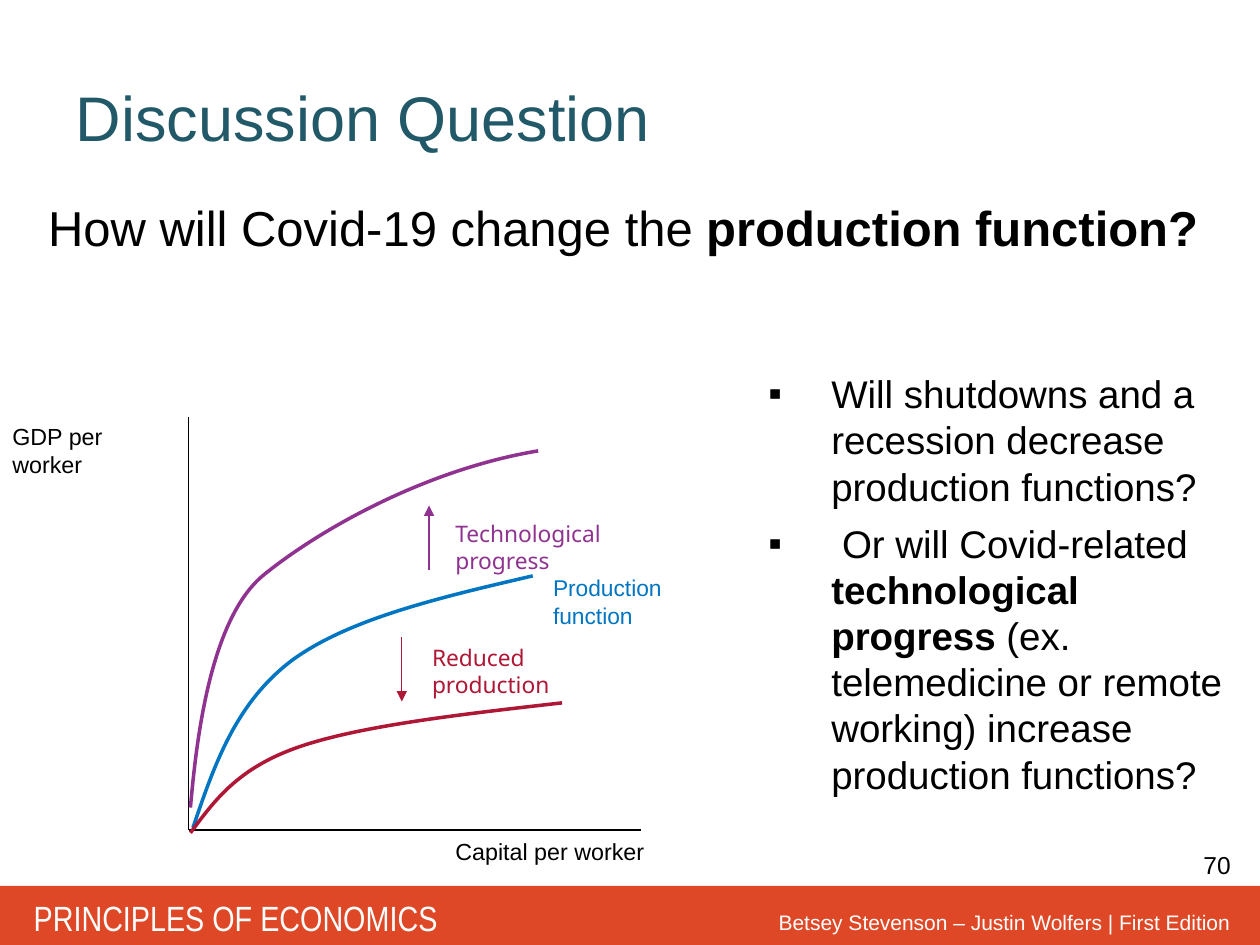
from dataclasses import dataclass

from lxml.etree import SubElement
from pptx import Presentation
from pptx.dml.color import RGBColor
from pptx.enum.shapes import MSO_CONNECTOR as Connector, MSO_SHAPE as Shape
from pptx.enum.text import MSO_ANCHOR as Anchor, PP_ALIGN as Align
from pptx.oxml.ns import qn
from pptx.util import Cm, Pt

BLACK, WHITE, TEAL, ORANGE = "000000", "FFFFFF", "215968", "DE4826"
BLUE, PURPLE, RED = "0075C1", "903390", "AE1735"
BULLET_INDENT = Cm(1.27)

Point = tuple[float, float]
Spans = list[tuple[str, bool]]


@dataclass
class Label:
    """A text with its place in centimetres and its look."""
    area: tuple[float, float, float, float]
    paragraphs: list[Spans]
    size: float
    color: str = BLACK
    font: str = "Arial"
    bulleted: bool = False
    format: dict | None = None


@dataclass
class Line:
    """A straight line from start to end."""
    start: Point
    end: Point
    color: str = BLACK
    width: float = 1
    arrow: bool = False


@dataclass
class Curve:
    """Two joined Bezier segments given by seven points."""
    points: list[Point]
    color: str


NOTO = {"line_spacing": Pt(15.4)}
RIGHT = {"alignment": Align.RIGHT}

TITLE = Label((1.27, 0.76, 22.86, 3.18), [[("Discussion Question", False)]], 36, TEAL,
              format={"alignment": Align.LEFT})

LABELS = [
    Label((14.82, 18.21, 10.24, 0.76),
          [[("Betsey Stevenson – Justin Wolfers | First Edition", False)]],
          12, WHITE, format=RIGHT),
    Label((0.43, 17.94, 9.37, 1.12), [[("PRINCIPLES OF ECONOMICS", False)]],
          20, WHITE, "Arial Narrow"),
    Label((22.75, 17.02, 2.31, 0.86), [[("70", False)]], 14, format=RIGHT),
    Label((0.72, 3.86, 23.98, 1.65),
          [[("How will Covid-19 change the ", False), ("production function?", True)]], 28),
    Label((0, 8.39, 3.81, 0.81), [[("GDP per worker", False)]], 13.3),
    Label((8.93, 16.76, 4.39, 0.84), [[("Capital per worker", False)]], 13.3),
    Label((10.9, 11.45, 3.71, 1.37), [[("Production function", False)]], 13, BLUE),
    Label((8.93, 10.36, 4.75, 0.81), [[("Technological progress", False)]],
          13, PURPLE, "Noto Sans", format=NOTO),
    Label((8.46, 12.87, 4.29, 1.37), [[("Reduced production", False)]],
          13, RED, "Noto Sans", format=NOTO),
    Label((15.24, 7.34, 10.16, 10.24),
          [[("Will shutdowns and a recession decrease production functions?", False)],
           [(" Or will Covid-related ", False), ("technological progress", True),
            (" (ex. telemedicine or remote working) increase production functions?", False)]],
          22, bulleted=True),
]

LINES = [
    Line((3.8, 8.4), (3.8, 16.74)),
    Line((12.93, 16.74), (3.8, 16.74)),
    Line((8.65, 11.5), (8.65, 10.19), PURPLE, 0.75, True),
    Line((8.1, 12.85), (8.1, 14.14), RED, 0.75, True),
]

CURVES = [
    Curve([(3.89, 16.69), (4.32, 15.42), (4.75, 14.17), (5.89, 13.31),
           (7.04, 12.47), (8.89, 12.04), (10.74, 11.61)], BLUE),
    Curve([(3.84, 16.28), (3.96, 14.91), (4.24, 12.45), (5.33, 11.58),
           (6.43, 10.69), (8.56, 9.47), (10.85, 9.09)], PURPLE),
    Curve([(3.84, 16.79), (4.32, 16.15), (4.78, 15.49), (6.02, 15.06),
           (7.26, 14.63), (9.3, 14.4), (11.33, 14.17)], RED),
]


def rgb(color: str) -> RGBColor:
    """Turn a hex string into a colour."""
    return RGBColor.from_string(color)


def apply(target, values: dict) -> None:
    """Set each attribute named in values."""
    for name, value in values.items():
        setattr(target, name, value)


def add_bullet(para) -> None:
    """Give a paragraph a square bullet with a hanging indent."""
    props = para._p.get_or_add_pPr()
    props.set("marL", str(BULLET_INDENT))
    props.set("indent", str(-BULLET_INDENT))
    SubElement(props, qn("a:buFont"), typeface="Arial")
    SubElement(props, qn("a:buChar"), char="▪")


def write_label(box, label: Label) -> None:
    """Place a box and fill it with the label's paragraphs."""
    places = (Cm(length) for length in label.area)
    apply(box, dict(zip(("left", "top", "width", "height"), places)))
    frame = box.text_frame
    frame.word_wrap = True
    for index, spans in enumerate(label.paragraphs):
        para = frame.add_paragraph() if index else frame.paragraphs[0]
        if label.bulleted:
            add_bullet(para)
        apply(para, {"space_before": Pt(6.2 if index else 0), **(label.format or {})})
        for text, bold in spans:
            span = para.add_run()
            span.text = text
            apply(span.font, {"name": label.font, "size": Pt(label.size), "bold": bold})
            span.font.color.rgb = rgb(label.color)


def draw_line(page, line: Line) -> None:
    """Draw a straight line, with an arrowhead at its end if wanted."""
    ends = (Cm(length) for length in line.start + line.end)
    connector = page.shapes.add_connector(Connector.STRAIGHT, *ends)
    connector.line.color.rgb = rgb(line.color)
    connector.line.width = Pt(line.width)
    if line.arrow:
        SubElement(connector.line._get_or_add_ln(), qn("a:tailEnd"), type="triangle")
    SubElement(connector._element.spPr, qn("a:effectLst"))


def bend(outline) -> None:
    """Turn each three straight steps of an outline into one Bezier segment."""
    steps = list(outline._element.iter(qn("a:lnTo")))
    track = steps[0].getparent()
    for first in range(0, len(steps), 3):
        segment = SubElement(track, qn("a:cubicBezTo"))
        for step in steps[first:first + 3]:
            segment.append(step[0])
            track.remove(step)


def draw_curve(page, curve: Curve) -> None:
    """Draw a smooth open curve."""
    start, *rest = [(Cm(x), Cm(y)) for x, y in curve.points]
    builder = page.shapes.build_freeform(*start)
    builder.add_line_segments(rest, close=False)
    outline = builder.convert_to_shape()
    bend(outline)
    outline.shadow.inherit = False
    outline.fill.background()
    outline.line.color.rgb = rgb(curve.color)
    outline.line.width = Pt(2)


def main() -> None:
    """Build the slide and save it."""
    deck = Presentation()
    apply(deck, {"slide_width": Cm(25.4), "slide_height": Cm(19.05)})
    page = deck.slides.add_slide(deck.slide_layouts[5])
    band = page.shapes.add_shape(Shape.RECTANGLE, 0, Cm(17.86), Cm(25.4), Cm(1.19))
    band.shadow.inherit = False
    band.fill.solid()
    band.fill.fore_color.rgb = rgb(ORANGE)
    band.line.fill.background()
    write_label(page.shapes.title, TITLE)
    page.shapes.title.text_frame.vertical_anchor = Anchor.MIDDLE
    for line in LINES:
        draw_line(page, line)
    for curve in CURVES:
        draw_curve(page, curve)
    for label in LABELS:
        write_label(page.shapes.add_textbox(0, 0, 0, 0), label)
    deck.save("out.pptx")


if __name__ == "__main__":
    main()
